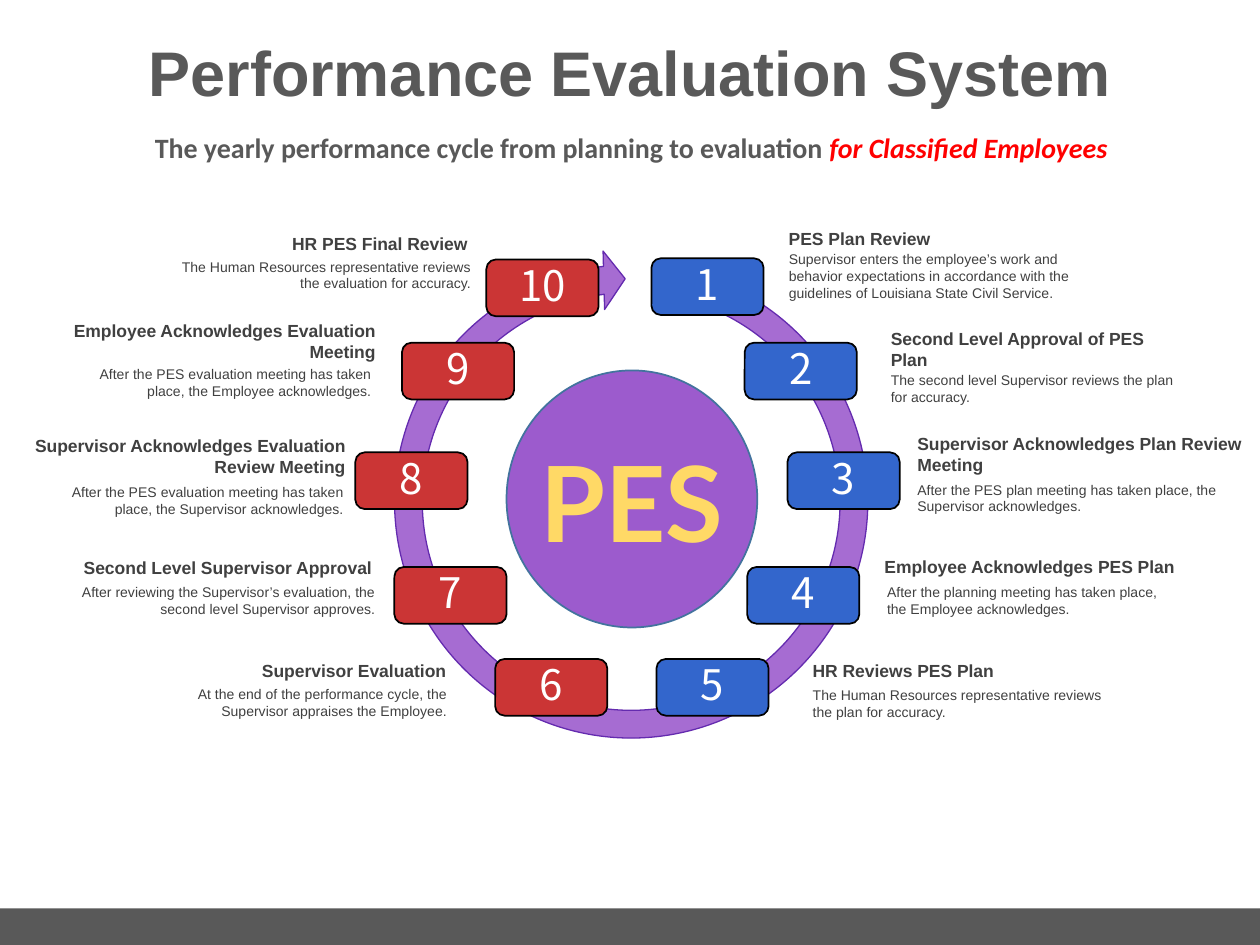
import dataclasses

import pptx
import pptx.dml.color
import pptx.enum.shapes
import pptx.enum.text
import pptx.oxml.ns
import pptx.util
from lxml import etree

Inches = pptx.util.Inches
Shape = pptx.enum.shapes.MSO_SHAPE
Align = pptx.enum.text.PP_ALIGN
Anchor = pptx.enum.text.MSO_ANCHOR
AutoSize = pptx.enum.text.MSO_AUTO_SIZE


@dataclasses.dataclass(frozen=True)
class Theme:
    """Colours, fonts and type sizes of the slide."""
    gray: str = "595959"
    ink: str = "404040"
    accent: str = "FF0000"
    white: str = "FFFFFF"
    black: str = "000000"
    blue: str = "3366CC"
    red: str = "CB3535"
    ring: str = "A66CD2"
    ring_line: str = "642BAF"
    hub: str = "9C5BCD"
    hub_line: str = "43739E"
    gold: str = "FFD966"
    sans: str = "Arial"
    subtitle_font: str = "Calibri"
    number_font: str = "Noto Sans CJK JP"
    hub_font: str = "Lato"
    title_size: int = 36
    subtitle_size: int = 16
    number_size: int = 24
    heading_size: int = 10
    detail_size: int = 8
    hub_size: int = 60


@dataclasses.dataclass(frozen=True)
class Step:
    """One step of the cycle: badge corner, then heading and detail with left, top, width, lines."""
    badge: tuple
    heading: str
    heading_box: tuple
    detail: str
    detail_box: tuple


THEME = Theme()
BADGE_SIZE = (0.89, 0.45)
PLANNING_STEPS = 5

STEPS = [
    Step((5.17, 2.05), "PES Plan Review", (6.17, 1.76, 2.5, 1),
         "Supervisor enters the employee’s work and behavior expectations in accordance with the "
         "guidelines of Louisiana State Civil Service.", (6.17, 1.94, 2.48, 3)),
    Step((5.91, 2.72), "Second Level Approval of PES Plan", (6.98, 2.55, 2.5, 2),
         "The second level Supervisor reviews the plan for accuracy.", (6.98, 2.9, 2.48, 2)),
    Step((6.25, 3.59), "Supervisor Acknowledges Plan Review Meeting", (7.19, 3.39, 2.81, 2),
         "After the PES plan meeting has taken place, the Supervisor acknowledges.",
         (7.19, 3.77, 2.79, 2)),
    Step((5.93, 4.5), "Employee Acknowledges PES Plan", (6.93, 4.36, 2.5, 1),
         "After the planning meeting has taken place, the Employee acknowledges.",
         (6.95, 4.58, 2.48, 2)),
    Step((5.21, 5.23), "HR Reviews PES Plan", (6.36, 5.19, 2.5, 1),
         "The Human Resources representative reviews the plan for accuracy.",
         (6.36, 5.4, 2.48, 2)),
    Step((3.93, 5.23), "Supervisor Evaluation", (1.13, 5.19, 2.5, 1),
         "At the end of the performance cycle, the Supervisor appraises the Employee.",
         (1.26, 5.39, 2.38, 2)),
    Step((3.13, 4.5), "Second Level Supervisor Approval", (0.54, 4.37, 2.5, 1),
         "After reviewing the Supervisor’s evaluation, the second level Supervisor approves.",
         (0.48, 4.58, 2.59, 2)),
    Step((2.82, 3.59), "Supervisor Acknowledges Evaluation Review Meeting", (-0.21, 3.4, 3.04, 2),
         "After the PES evaluation meeting has taken place, the Supervisor acknowledges.",
         (0.18, 3.79, 2.64, 2)),
    Step((3.19, 2.72), "Employee Acknowledges Evaluation Meeting", (0.31, 2.49, 2.76, 2),
         "After the PES evaluation meeting has taken place, the Employee acknowledges.",
         (0.56, 2.85, 2.48, 2)),
    Step((3.86, 2.06), "HR PES Final Review", (1.3, 1.8, 2.5, 1),
         "The Human Resources representative reviews the evaluation for accuracy.",
         (1.33, 2, 2.5, 2)),
]


def rgb(value):
    """Turn a hex string into a colour."""
    return pptx.dml.color.RGBColor.from_string(value)


def place(shape, box):
    """Move a shape to left, top, width and height in inches."""
    shape.left, shape.top, shape.width, shape.height = map(Inches, box)


def add_span(para, text, font, size, color, bold=False, italic=False):
    """Append one formatted run to a paragraph."""
    span = para.add_run()
    span.text = text
    span.font.name = font
    span.font.size = pptx.util.Pt(size)
    span.font.color.rgb = rgb(color)
    span.font.bold = bold
    span.font.italic = italic


def set_frame(shape, align, anchor=Anchor.MIDDLE, inset=(0, 0), auto_size=AutoSize.NONE):
    """Prepare the text frame of a shape and return its first paragraph."""
    frame = shape.text_frame
    frame.word_wrap = True
    frame.auto_size = auto_size
    frame.vertical_anchor = anchor
    frame.margin_left = frame.margin_right = Inches(inset[0])
    frame.margin_top = frame.margin_bottom = Inches(inset[1])
    para = frame.paragraphs[0]
    para.alignment = align
    return para


def add_figure(page, kind, box, fill, line=None, width=1):
    """Add a flat preset shape with an optional outline."""
    figure = page.shapes.add_shape(kind, *map(Inches, box))
    figure.shadow.inherit = False
    figure.fill.solid()
    figure.fill.fore_color.rgb = rgb(fill)
    if line:
        figure.line.color.rgb = rgb(line)
        figure.line.width = pptx.util.Pt(width)
    else:
        figure.line.fill.background()
    return figure


def fill_header(page, title_box, subtitle_box):
    """Format the title and the subtitle in the layout's placeholders."""
    title, body = page.shapes.title, page.placeholders[1]
    for holder, box in ((title, title_box), (body, subtitle_box)):
        place(holder, box)
        para = set_frame(holder, Align.CENTER)
        para.line_spacing = 0.9
        para.space_before = pptx.util.Pt(0)
    add_span(title.text_frame.paragraphs[0], "Performance Evaluation System",
             THEME.sans, THEME.title_size, THEME.gray, bold=True)
    props = para._p.get_or_add_pPr()
    props.set("marL", "0")
    props.set("indent", "0")
    etree.SubElement(props, pptx.oxml.ns.qn("a:buNone"))
    subtitle = (THEME.subtitle_font, THEME.subtitle_size)
    add_span(para, "The yearly performance cycle from planning to evaluation ",
             *subtitle, THEME.gray, bold=True)
    add_span(para, "for Classified Employees", *subtitle, THEME.accent, bold=True, italic=True)


def add_ring(page, box):
    """Add the circular arrow behind the badges."""
    ring = add_figure(page, Shape.CIRCULAR_ARROW, box, THEME.ring, THEME.ring_line, 0.75)
    ring.rotation = 14.5
    for index, value in enumerate((0.055, 3.307, 149.071, 167.291, 0.058)):
        ring.adjustments[index] = value


def add_hub(page, box):
    """Add the central disc and its large label."""
    add_figure(page, Shape.OVAL, box, THEME.hub, THEME.hub_line)
    left, top, width, height = box
    label = page.shapes.add_textbox(*map(Inches, (left + 0.1, top + 0.48, width - 0.2, 1.11)))
    para = set_frame(label, Align.CENTER, Anchor.TOP, (0.1, 0.05), AutoSize.SHAPE_TO_FIT_TEXT)
    add_span(para, "PES", THEME.hub_font, THEME.hub_size, THEME.gold, bold=True)


def add_caption(page, box, text, align, size, bold):
    """Add a caption whose height follows from its number of lines."""
    left, top, width, lines = box
    height = 0.1 + lines * size * 1.15 / 72
    caption = page.shapes.add_textbox(*map(Inches, (left, top, width, height)))
    para = set_frame(caption, align, Anchor.TOP, (0.09, 0.05), AutoSize.SHAPE_TO_FIT_TEXT)
    add_span(para, text, THEME.sans, size, THEME.ink, bold)


def add_step(page, number, step):
    """Add the numbered badge of a step with its heading and detail."""
    planning = number <= PLANNING_STEPS
    badge = add_figure(page, Shape.ROUNDED_RECTANGLE, step.badge + BADGE_SIZE,
                       THEME.blue if planning else THEME.red, THEME.black)
    para = set_frame(badge, Align.CENTER)
    para.line_spacing = 0.9
    add_span(para, str(number), THEME.number_font, THEME.number_size, THEME.white)
    align = Align.LEFT if planning else Align.RIGHT
    add_caption(page, step.detail_box, step.detail, align, THEME.detail_size, False)
    add_caption(page, step.heading_box, step.heading, align, THEME.heading_size, True)


def main():
    """Build the slide and save the deck."""
    deck = pptx.Presentation()
    deck.slide_width, deck.slide_height = Inches(10), Inches(7.5)
    page = deck.slides.add_slide(deck.slide_layouts[1])
    add_figure(page, Shape.RECTANGLE, (0, 7.21, 10, 0.29), THEME.gray)
    fill_header(page, (0, 0.18, 10, 0.85), (0, 0.96, 10.02, 0.45))
    add_ring(page, (3.01, 1.98, 4, 4))
    for number, step in enumerate(STEPS, 1):
        add_step(page, number, step)
    add_hub(page, (4.02, 2.94, 1.99, 2.04))
    deck.save("out.pptx")


if __name__ == "__main__":
    main()
